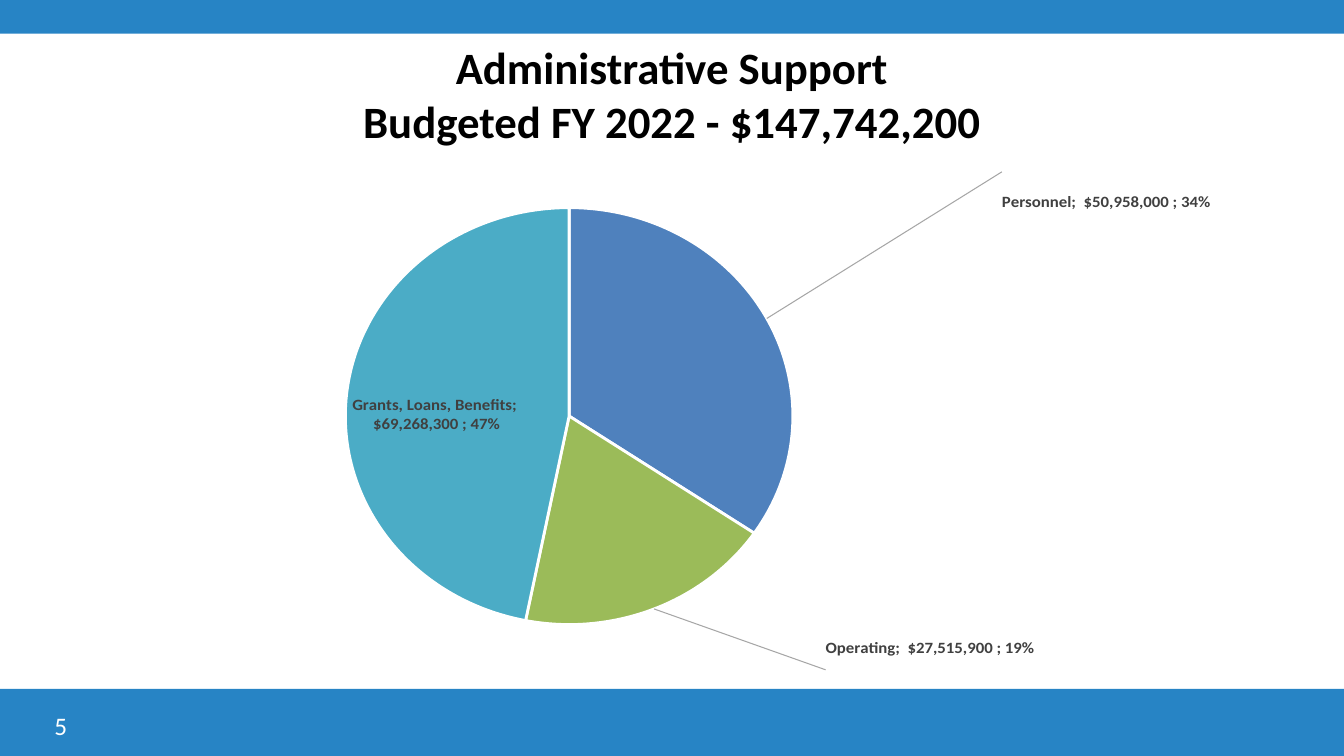
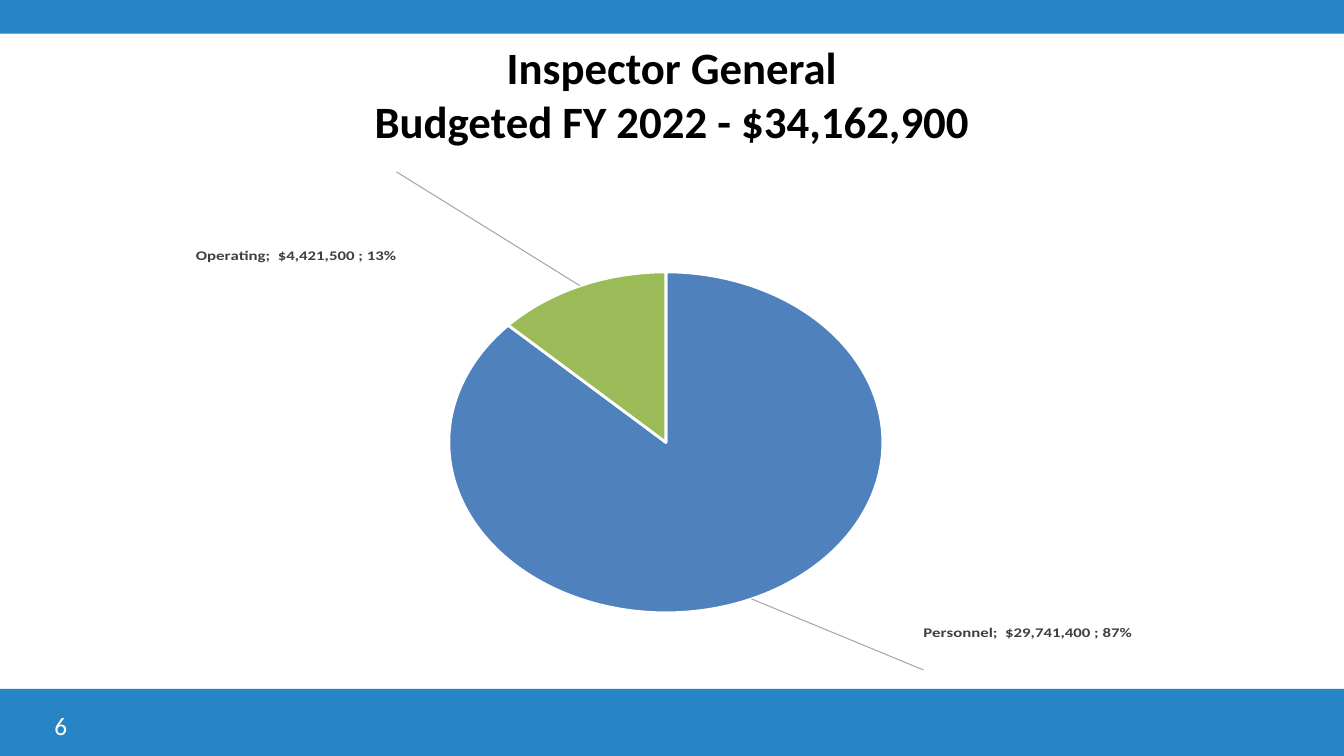
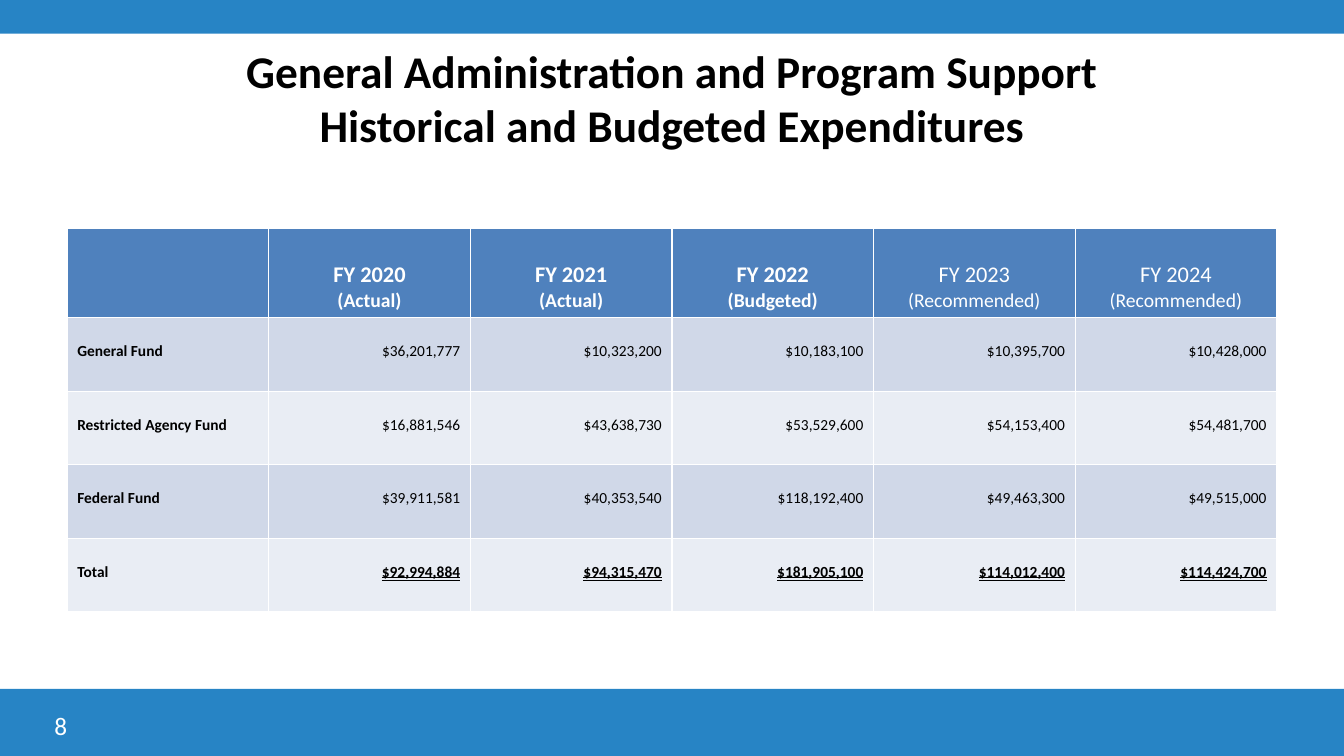
from copy import deepcopy
from dataclasses import dataclass

from lxml import etree
from pptx import Presentation
from pptx.chart.data import CategoryChartData
from pptx.dml.color import RGBColor
from pptx.enum import chart as chart_enum, shapes, text
from pptx.oxml import parse_xml
from pptx.oxml.ns import nsdecls, qn
from pptx.util import Inches, Pt


@dataclass(frozen=True)
class Theme:
    font: str = "Calibri"
    band: str = "2784C5"
    white: str = "FFFFFF"
    black: str = "000000"
    label: str = "404040"
    leader: str = "A6A6A6"
    slices: tuple = ("4F81BD", "9BBB59", "4BACC6")
    header: str = "4F81BD"
    rows: tuple = ("D0D8E8", "E9EDF4")
    title_size: float = 32
    number_size: float = 18
    label_size: float = 12
    chart_size: float = 10
    header_size: float = 16
    note_size: float = 14
    cell_size: float = 11


THEME = Theme()
WIDTH, HEIGHT = 40 / 3, 7.5
TOP_BAND, BOTTOM_BAND = 1 / 3, 2 / 3
CONTENT_WIDTH = 12
MARGIN = (WIDTH - CONTENT_WIDTH) / 2
MONEY = '_("$"* #,##0_);_("$"* \\(#,##0\\);_("$"* "-"??_);_(@_)'


def color(value):
    return RGBColor.from_string(value)


def style_font(font, size, value, bold=False):
    font.name = THEME.font
    font.size = Pt(size)
    font.bold = bold
    font.color.rgb = color(value)


def manual_layout(**settings):
    """Chart layout element; settings are in schema order."""
    layout = parse_xml(f"<c:layout {nsdecls('c')}><c:manualLayout/></c:layout>")
    for name, value in settings.items():
        etree.SubElement(layout[0], qn(f"c:{name}")).set("val", str(value))
    return layout


class Deck:
    def __init__(self):
        self.presentation = Presentation()
        self.presentation.slide_width = Inches(WIDTH)
        self.presentation.slide_height = Inches(HEIGHT)
        self.slide = None

    def new_slide(self, title_lines, number, top=0.3, height=1.25, size=THEME.title_size):
        layout = self.presentation.slide_layouts[5]
        self.slide = self.presentation.slides.add_slide(layout)
        self.band(0, TOP_BAND)
        self.band(HEIGHT - BOTTOM_BAND, BOTTOM_BAND)
        self.title(title_lines, top, height, size)
        self.page_number(number)

    def band(self, top, height):
        band = self.slide.shapes.add_shape(
            shapes.MSO_SHAPE.RECTANGLE, 0, Inches(top), Inches(WIDTH), Inches(height))
        band.shadow.inherit = False
        band.fill.solid()
        band.fill.fore_color.rgb = color(THEME.band)
        band.line.fill.background()

    def title(self, lines, top, height, size):
        title = self.slide.shapes.title
        title.left, title.top = Inches(MARGIN), Inches(top)
        title.width, title.height = Inches(CONTENT_WIDTH), Inches(height)
        frame = title.text_frame
        frame.text = "\v".join(lines)
        frame.word_wrap = True
        frame.auto_size = text.MSO_AUTO_SIZE.NONE
        frame.vertical_anchor = text.MSO_ANCHOR.MIDDLE
        paragraph = frame.paragraphs[0]
        paragraph.alignment = text.PP_ALIGN.CENTER
        style_font(paragraph.font, size, THEME.black, bold=True)

    def page_number(self, number):
        box = self.slide.shapes.add_textbox(
            Inches(0.44), Inches(7), Inches(3.11), Inches(0.4))
        box.text_frame.word_wrap = True
        paragraph = box.text_frame.paragraphs[0]
        paragraph.text = str(number)
        style_font(paragraph.font, THEME.number_size, THEME.white)

    def pie(self, amounts, plot_area, label_offsets):
        """Plot area is x, y, w, h and offsets are x, y, as shares of the chart."""
        data = CategoryChartData(number_format=MONEY)
        data.categories = list(amounts)
        data.add_series("Series 1", list(amounts.values()))
        chart = self.slide.shapes.add_chart(
            chart_enum.XL_CHART_TYPE.PIE, Inches(MARGIN), Inches(1.7),
            Inches(CONTENT_WIDTH), Inches(4.95), data).chart
        chart.has_title = False
        chart.has_legend = False
        style_font(chart.font, THEME.chart_size, THEME.black)
        plot = chart.plots[0]
        plot.vary_by_categories = False

        # Slices
        series = plot.series[0]
        for index, value in enumerate(THEME.slices[:len(amounts)]):
            slice_format = series.points[index].format
            slice_format.fill.solid()
            slice_format.fill.fore_color.rgb = color(value)
            slice_format.line.color.rgb = color(THEME.white)
            slice_format.line.width = Pt(2)

        # Plot position
        plot_element = chart.element.find(f".//{qn('c:plotArea')}")
        for old_layout in plot_element.findall(qn("c:layout")):
            plot_element.remove(old_layout)
        x, y, w, h = plot_area
        plot_element.insert(0, manual_layout(
            layoutTarget="inner", xMode="edge", yMode="edge", x=x, y=y, w=w, h=h))
        self.pie_labels(series.data_labels, label_offsets)

    def pie_labels(self, labels, offsets):
        labels.show_value = labels.show_percentage = labels.show_category_name = True
        labels.number_format = MONEY
        labels.number_format_is_linked = True
        labels.position = chart_enum.XL_LABEL_POSITION.INSIDE_END
        style_font(labels.font, THEME.label_size, THEME.label, bold=True)
        element = labels._element
        for old_flag in element.findall(qn("c:showLeaderLines")):
            element.remove(old_flag)
        etree.SubElement(element, qn("c:separator")).text = "; "

        # Labels moved away from their slices
        shared = list(element)
        for index, (x, y) in enumerate(offsets):
            label = parse_xml(f'<c:dLbl {nsdecls("c")}><c:idx val="{index}"/></c:dLbl>')
            label.append(manual_layout(x=x, y=y))
            label.extend(deepcopy(child) for child in shared)
            label.find(qn("c:dLblPos")).set("val", "bestFit")
            element.insert(index, label)

        # Leader lines
        etree.SubElement(element, qn("c:showLeaderLines")).set("val", "1")
        element.append(parse_xml(
            f'<c:leaderLines {nsdecls("c", "a")}><c:spPr><a:ln w="9525"><a:solidFill>'
            f'<a:srgbClr val="{THEME.leader}"/></a:solidFill></a:ln></c:spPr>'
            '</c:leaderLines>'))

    def table(self, headers, rows):
        column_count = len(headers) + 1
        heights = [0.88] + [0.73] * len(rows)
        table = self.slide.shapes.add_table(
            len(heights), column_count, Inches(MARGIN), Inches(2.27),
            Inches(CONTENT_WIDTH), Inches(sum(heights))).table
        table.horz_banding = False
        for column in table.columns:
            column.width = Inches(CONTENT_WIDTH / column_count)
        for row, height in zip(table.rows, heights):
            row.height = Inches(height)

        # Header row
        self.cell(table.cell(0, 0), [], THEME.header, 0.32)
        for index, (year, status) in enumerate(headers, 1):
            bold = status != "(Recommended)"
            lines = [(year, THEME.header_size, bold), (status, THEME.note_size, bold)]
            self.cell(table.cell(0, index), lines, THEME.header, 0.32,
                      THEME.white, text.PP_ALIGN.CENTER)

        # Fund rows
        for row_index, (name, *amounts) in enumerate(rows, 1):
            fill = THEME.rows[(row_index - 1) % 2]
            total = name == "Total"
            self.cell(table.cell(row_index, 0), [(name, THEME.cell_size, True)], fill, 0.24)
            for index, amount in enumerate(amounts, 1):
                cell = table.cell(row_index, index)
                self.cell(cell, [(amount, THEME.cell_size, total)], fill, 0.24,
                          alignment=text.PP_ALIGN.RIGHT)
                if total:
                    font = cell.text_frame.paragraphs[0].font
                    font.underline = text.MSO_UNDERLINE.DOUBLE_LINE

    def cell(self, cell, lines, fill, margin_top, value=THEME.black,
             alignment=text.PP_ALIGN.LEFT):
        cell.margin_top = Inches(margin_top)
        cell.vertical_anchor = text.MSO_ANCHOR.TOP
        frame = cell.text_frame
        for index, (words, size, bold) in enumerate(lines):
            paragraph = frame.add_paragraph() if index else frame.paragraphs[0]
            paragraph.text = words
            paragraph.alignment = alignment
            style_font(paragraph.font, size, value, bold)
        properties = cell._tc.get_or_add_tcPr()
        for side in ("lnL", "lnR", "lnT", "lnB"):
            properties.append(parse_xml(
                f'<a:{side} {nsdecls("a")} w="12700"><a:solidFill>'
                f'<a:srgbClr val="{THEME.white}"/></a:solidFill></a:{side}>'))
        cell.fill.solid()
        cell.fill.fore_color.rgb = color(fill)


def main():
    deck = Deck()

    # Administrative support
    deck.new_slide(["Administrative Support", "Budgeted FY 2022 - $147,742,200"], 5)
    deck.pie(
        {"Personnel": 50958000, "Operating": 27515900, "Grants, Loans, Benefits": 69268300},
        plot_area=(0.23, 0.03, 0.37, 0.9),
        label_offsets=[(0.19, -0.31), (0.14, 0.12)])

    # Inspector general
    deck.new_slide(["Inspector General", "Budgeted FY 2022 - $34,162,900"], 6)
    deck.pie(
        {"Personnel": 29741400, "Operating": 4421500},
        plot_area=(0.31, 0.06, 0.37, 0.87),
        label_offsets=[(0.14, 0.17), (-0.15, -0.28)])

    # Expenditure history
    deck.new_slide(
        ["General Administration and Program Support",
         "Historical and Budgeted Expenditures"], 8, top=0.32, height=1.29, size=32.4)
    deck.table(
        [("FY 2020", "(Actual)"), ("FY 2021", "(Actual)"), ("FY 2022", "(Budgeted)"),
         ("FY 2023", "(Recommended)"), ("FY 2024", "(Recommended)")],
        [("General Fund", "$36,201,777", "$10,323,200", "$10,183,100",
          "$10,395,700", "$10,428,000"),
         ("Restricted Agency Fund", "$16,881,546", "$43,638,730", "$53,529,600",
          "$54,153,400", "$54,481,700"),
         ("Federal Fund", "$39,911,581", "$40,353,540", "$118,192,400",
          "$49,463,300", "$49,515,000"),
         ("Total", "$92,994,884", "$94,315,470", "$181,905,100",
          "$114,012,400", "$114,424,700")])

    deck.presentation.save("out.pptx")


if __name__ == "__main__":
    main()
